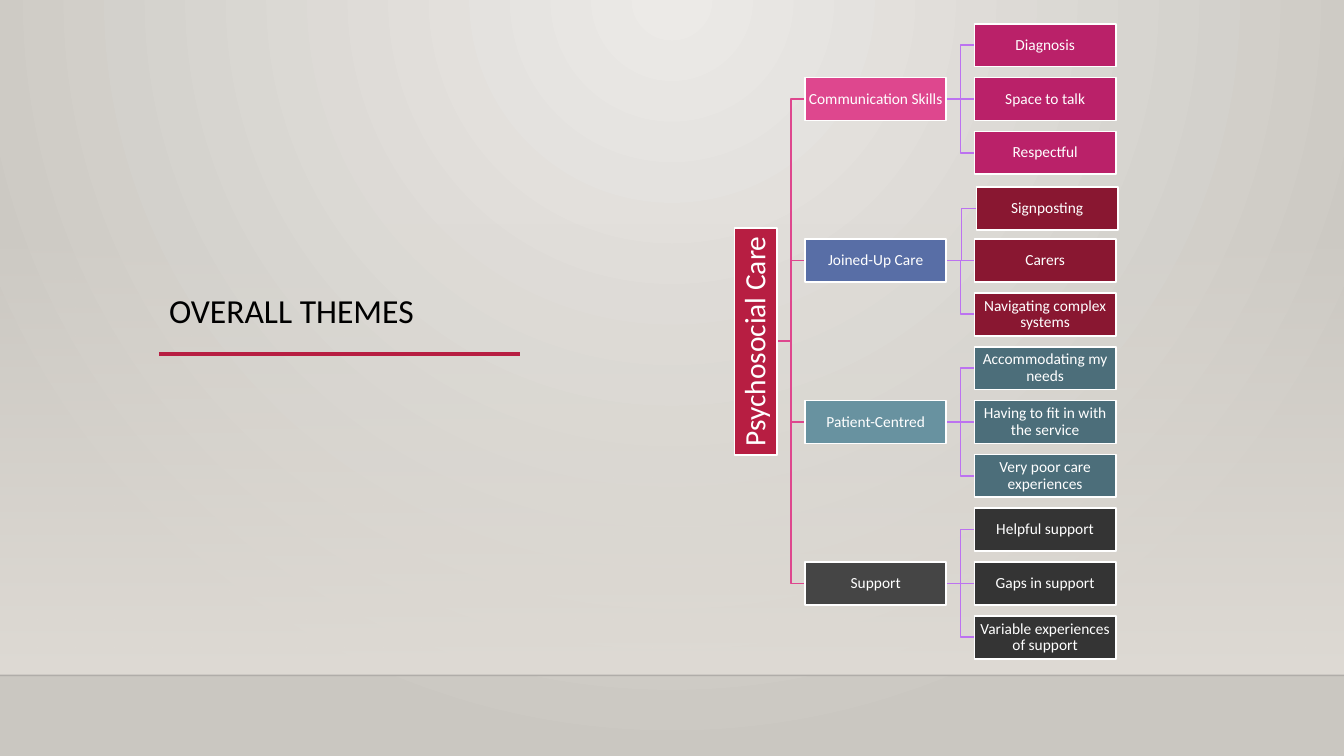
from dataclasses import dataclass

from lxml.etree import SubElement
from pptx import Presentation
from pptx.dml.color import RGBColor
from pptx.enum.shapes import MSO_CONNECTOR, MSO_SHAPE
from pptx.enum.text import MSO_ANCHOR, PP_ALIGN
from pptx.oxml import parse_xml
from pptx.oxml.ns import nsdecls, qn
from pptx.util import Cm, Pt


@dataclass(frozen=True)
class Theme:
    font: str = "Calibri"
    title: int = 24
    root: int = 21
    node: int = 11
    ink: str = "000000"
    white: str = "FFFFFF"
    red: str = "B71E42"
    pink: str = "DE478E"
    lilac: str = "BC72F0"
    glow: str = "ECEAE7"
    edge: str = "CAC7C1"
    wall: str = "DFDBD5"
    floor: str = "000001"


theme = Theme()


def write(shape, text, size=theme.node, color=theme.white,
          align=PP_ALIGN.CENTER, anchor=MSO_ANCHOR.MIDDLE, inset=(0.03, 0.03)):
    frame = shape.text_frame
    frame.word_wrap = True
    frame.vertical_anchor = anchor
    frame.margin_left = frame.margin_right = Cm(inset[0])
    frame.margin_top = frame.margin_bottom = Cm(inset[1])
    para = frame.paragraphs[0]
    para.alignment = align
    para.line_spacing = 0.9
    run = para.add_run()
    run.text = text
    run.font.name = theme.font
    run.font.size = Pt(size)
    run.font.color.rgb = RGBColor.from_string(color)


def link(x1, y1, x2, y2, color, width=1.25):
    """Join two points: straight when level, else with an elbow."""
    kind = MSO_CONNECTOR.STRAIGHT if abs(y1 - y2) < 0.01 else MSO_CONNECTOR.ELBOW
    line = slide.shapes.add_connector(kind, Cm(x1), Cm(y1), Cm(x2), Cm(y2))
    line.line.color.rgb = RGBColor.from_string(color)
    line.line.width = Pt(width)
    SubElement(line._element.spPr, qn("a:effectLst"))
    return line


deck = Presentation()
wide, high = 33.87, 19.05
deck.slide_width, deck.slide_height = Cm(wide), Cm(high)
slide = deck.slides.add_slide(deck.slide_layouts[6])

# Backdrop: round glow, wall fading in, floor line
floor = 17.02
wall = slide.shapes.add_shape(
    MSO_SHAPE.RECTANGLE, 0, Cm(5.61), Cm(wide), Cm(floor - 5.61))
wall.shadow.inherit = False
wall.line.fill.background()
for fill, pair in ((slide.background.fill, (theme.glow, theme.edge)),
                   (wall.fill, (theme.wall, theme.wall))):
    fill.gradient()
    for place, (stop, color) in enumerate(zip(fill.gradient_stops, pair)):
        stop.position = place
        stop.color.rgb = RGBColor.from_string(color)
wall.fill.gradient_angle = 270
lin = slide._element.xpath(".//p:bg//a:lin")[0]
lin.getparent().replace(lin, parse_xml(
    f'<a:path {nsdecls("a")} path="circle">'
    '<a:fillToRect l="43000" t="0" r="43000" b="100000"/></a:path>'))
base = link(0, floor, wide, floor, theme.floor, 1)
for part, query, alpha in ((wall, ".//a:gs[1]/a:srgbClr", "0"),
                           (base, ".//a:ln//a:srgbClr", "20000")):
    SubElement(part._element.xpath(query)[0], qn("a:alpha")).set("val", alpha)

# Title
link(4.01, 8.92, 13.11, 8.92, theme.red, 2.5)
title = slide.shapes.add_textbox(Cm(4.01), Cm(2.21), Cm(9.1), Cm(6.25))
write(title, "OVERALL THEMES", size=theme.title, color=theme.ink,
      align=PP_ALIGN.LEFT, anchor=MSO_ANCHOR.BOTTOM, inset=(0.25, 0.13))

# Tree: name, branch fill, leaf fill, leaves
themes = [
    ("Communication Skills", theme.pink, "BA2169",
     ["Diagnosis", "Space to talk", "Respectful"]),
    ("Joined-Up Care", "586EA6", "891731",
     ["Signposting", "Carers", "Navigating complex systems"]),
    ("Patient-Centred", "6892A0", "4C6E7A",
     ["Accommodating my needs", "Having to fit in with the service",
      "Very poor care experiences"]),
    ("Support", "454545", "343434",
     ["Helpful support", "Gaps in support", "Variable experiences of support"]),
]
box_w, box_h, root_w = 3.56, 1.08, 5.72
root_x, twig_x, leaf_x = 19.05, 20.29, 24.56  # root centre, then left edges
first, last = 1.14, 16.06  # centres of the top and bottom leaves
step = (last - first) / 11
root_y = (first + last) / 2

# Each box: centre x, centre y, width, text, fill, size, rotation
boxes = [(root_x, root_y, root_w, "Psychosocial Care", theme.red, theme.root, 270)]
for row, (name, fill, shade, leaves) in enumerate(themes):
    twig_y = first + (3 * row + 1) * step
    link(root_x + box_h / 2, root_y, twig_x, twig_y, theme.pink)
    boxes.append((twig_x + box_w / 2, twig_y, box_w, name, fill, theme.node, 0))
    for col, leaf in enumerate(leaves):
        nudge = 0.05 if leaf == "Signposting" else 0
        x, y = leaf_x + nudge, first + (3 * row + col) * step + nudge
        link(twig_x + box_w, twig_y, x, y, theme.lilac)
        boxes.append((x + box_w / 2, y, box_w, leaf, shade, theme.node, 0))

for x, y, width, text, fill, size, turn in boxes:
    box = slide.shapes.add_shape(
        MSO_SHAPE.RECTANGLE, Cm(x - width / 2), Cm(y - box_h / 2),
        Cm(width), Cm(box_h))
    box.rotation = turn
    box.shadow.inherit = False
    box.fill.solid()
    box.fill.fore_color.rgb = RGBColor.from_string(fill)
    box.line.color.rgb = RGBColor.from_string(theme.white)
    box.line.width = Pt(1.25)
    write(box, text, size=size)

deck.save("out.pptx")
